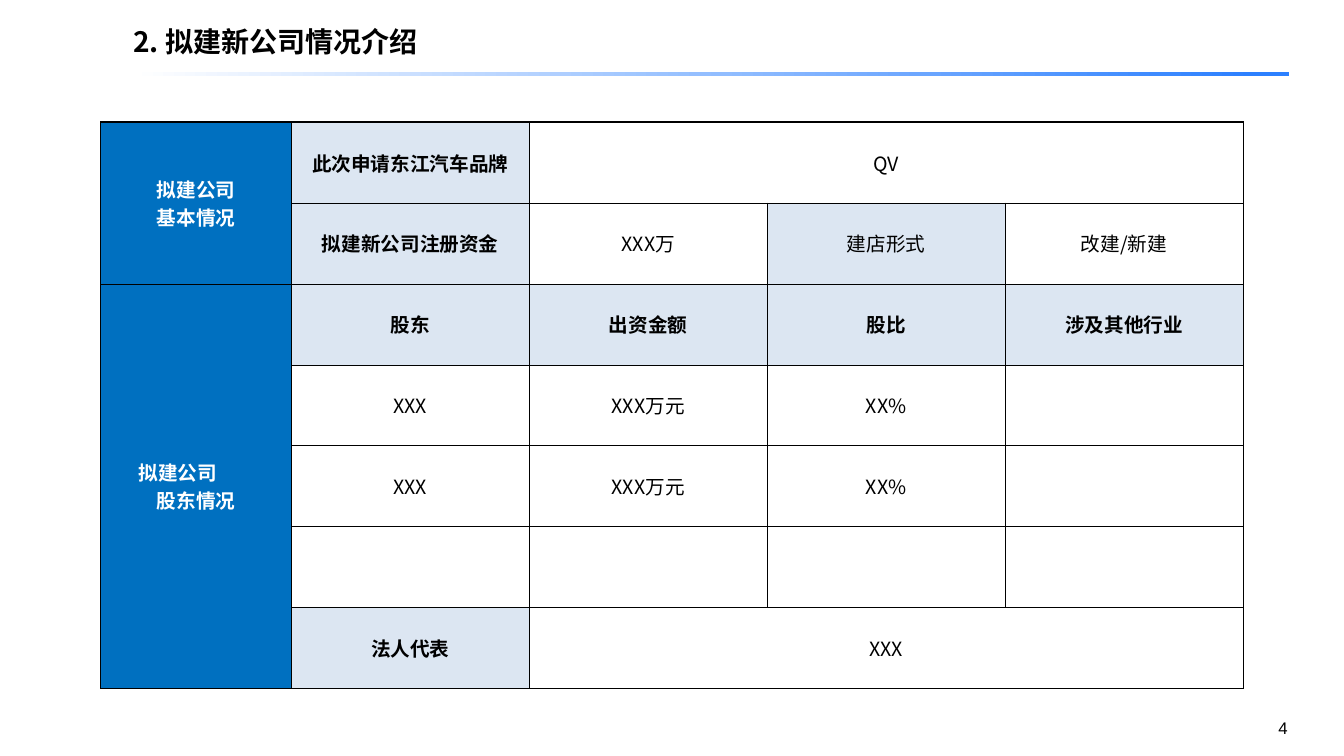
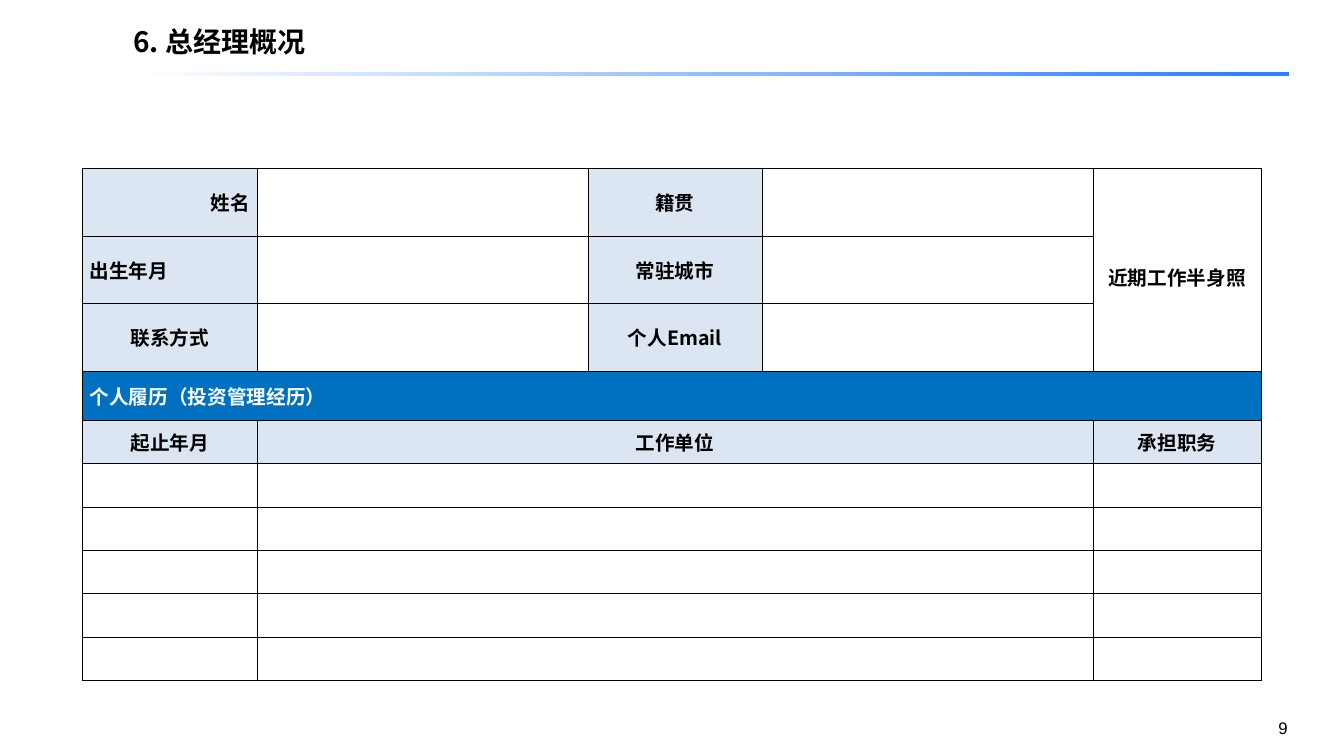
from copy import deepcopy
from dataclasses import dataclass

from lxml.etree import SubElement
from pptx import Presentation
from pptx.dml.color import RGBColor
from pptx.enum.shapes import MSO_SHAPE
from pptx.enum.text import MSO_ANCHOR as Anchor, PP_ALIGN as Align
from pptx.oxml.ns import qn
from pptx.util import Inches, Pt

WHITE = RGBColor(0xFF, 0xFF, 0xFF)
BLACK = RGBColor(0, 0, 0)
BLUE = RGBColor(0x00, 0x70, 0xC0)
PALE = RGBColor(0xDC, 0xE6, 0xF2)
RULE_STOPS = [
    (0, WHITE),
    (0.51, RGBColor(0x91, 0xBD, 0xFF)),
    (0.97, RGBColor(0x2C, 0x80, 0xFF)),
]
CJK = "Noto Sans CJK SC"
LATIN = "Arial"
OUTER, INNER = 1, 0.25


@dataclass
class Entry:
    """Content and look of one table cell."""

    text: str = ""
    fill: RGBColor = None
    bold: bool = False
    color: RGBColor = BLACK
    span: tuple = (1, 1)
    align: Align = Align.CENTER
    spacing: float = None
    stagger: float = 0


def label(text, **look):
    """Return a pale, bold label entry."""
    return Entry(text, PALE, True, **look)


def section(text, **look):
    """Return a blue section entry with white bold text."""
    return Entry(text, BLUE, True, WHITE, **look)


def style_runs(paragraph, font_name, size, color, bold=False):
    """Format every run of a paragraph."""
    for run in paragraph.runs:
        font = run.font
        font.name, font.size, font.bold = font_name, Pt(size), bold
        font.color.rgb = color
        SubElement(run._r.get_or_add_rPr(), qn("a:ea"), typeface=font_name)


def add_text(slide, box, text, font_name, size, bold=False, anchor=Anchor.TOP,
             align=Align.LEFT, spacing=None, insets=(0.1, 0.05)):
    """Place a single line of text in a box."""
    frame = slide.shapes.add_textbox(*map(Inches, box)).text_frame
    frame.word_wrap = True
    frame.vertical_anchor = anchor
    frame.margin_left = frame.margin_right = Inches(insets[0])
    frame.margin_top = frame.margin_bottom = Inches(insets[1])
    frame.text = text
    line = frame.paragraphs[0]
    line.alignment, line.line_spacing = align, spacing
    style_runs(line, font_name, size, BLACK, bold)


def add_title_rule(slide, box):
    """Draw the fading rule under the title."""
    rule = slide.shapes.add_shape(MSO_SHAPE.RECTANGLE, *map(Inches, box))
    rule.shadow.inherit = False
    rule.line.fill.background()
    rule.fill.gradient()
    rule.fill.gradient_angle = 0
    stop_list = rule._element.spPr.find(".//" + qn("a:gsLst"))
    stop_list.append(deepcopy(stop_list[0]))
    for stop, (position, color) in zip(rule.fill.gradient_stops, RULE_STOPS):
        stop.position, stop.color.rgb = position, color


def add_page(deck, title, number):
    """Add a slide with the shared title, rule and page number."""
    slide = deck.slides.add_slide(deck.slide_layouts[6])
    add_title_rule(slide, (1.3, 0.71, 11.48, 0.04))
    add_text(slide, (1.24, 0.06, 11.5, 0.75), title, CJK, 20, bold=True,
             anchor=Anchor.MIDDLE, spacing=0.9, insets=(0.08, 0.04))
    add_text(slide, (11.13, 7.07, 1.74, 0.3), number, LATIN, 12, align=Align.RIGHT)
    return slide


def set_borders(cell, weights):
    """Draw black borders with weights given as left, right, top, bottom."""
    for side, weight in zip("LRTB", weights):
        border = SubElement(cell._tc.get_or_add_tcPr(), qn(f"a:ln{side}"), w=str(Pt(weight)))
        solid = SubElement(border, qn("a:solidFill"))
        SubElement(solid, qn("a:srgbClr"), val=str(BLACK))


def fill_cell(cell, entry, margin):
    """Write and format one entry in a cell."""
    cell.vertical_anchor = Anchor.MIDDLE
    cell.margin_left = Inches(margin)
    cell.margin_right = Inches(margin + entry.stagger)
    cell.margin_top = cell.margin_bottom = 0
    if entry.fill is None:
        cell.fill.background()
    else:
        cell.fill.solid()
        cell.fill.fore_color.rgb = entry.fill
    cell.text_frame.text = entry.text
    for index, paragraph in enumerate(cell.text_frame.paragraphs):
        paragraph.alignment = entry.align
        paragraph.line_spacing = entry.spacing
        if index and entry.stagger:
            paragraph._p.get_or_add_pPr().set("marL", str(Inches(entry.stagger)))
        style_runs(paragraph, CJK, 14, entry.color, entry.bold)
        if not paragraph.runs:
            SubElement(paragraph._p, qn("a:endParaRPr"), sz="1400")


def add_form(slide, left, top, widths, heights, rows, margin):
    """Build a bordered form table; None marks a cell covered by a span."""
    table = slide.shapes.add_table(
        len(heights), len(widths), Inches(left), Inches(top),
        Inches(sum(widths)), Inches(sum(heights))).table
    table.first_row = table.horz_banding = False
    for column, width in zip(table.columns, widths):
        column.width = Inches(width)
    for row, height in zip(table.rows, heights):
        row.height = Inches(height)
    last_row, last_column = len(heights) - 1, len(widths) - 1
    for r, entries in enumerate(rows):
        for c, entry in enumerate(entries):
            cell = table.cell(r, c)
            edges = (c == 0, c == last_column, r == 0, r == last_row)
            set_borders(cell, [OUTER if edge else INNER for edge in edges])
            fill_cell(cell, entry or Entry(), margin)
            if entry and entry.span != (1, 1):
                down, across = entry.span
                cell.merge(table.cell(r + down - 1, c + across - 1))


def add_company_slide(deck):
    """Add the slide on the planned company and its shareholders."""
    slide = add_page(deck, "2. 拟建新公司情况介绍", "4")
    shareholder = [None, Entry("XXX"), Entry("XXX万元"), Entry("XX%"), Entry()]
    rows = [
        [section("拟建公司\n基本情况", span=(2, 1)), label("此次申请东江汽车品牌"),
         Entry("QV", span=(1, 3)), None, None],
        [None, label("拟建新公司注册资金"), Entry("XXX万"),
         Entry("建店形式", PALE), Entry("改建/新建")],
        [section("拟建公司\n股东情况", span=(5, 1), stagger=0.36)]
        + [label(text) for text in ("股东", "出资金额", "股比", "涉及其他行业")],
        shareholder,
        shareholder,
        [None] + [Entry()] * 4,
        [None, label("法人代表"), Entry("XXX", span=(1, 3)), None, None],
    ]
    heights = [5.62 / len(rows)] * len(rows)
    add_form(slide, 1, 1.21, [1.89] + [2.36] * 4, heights, rows, 0.02)


def add_manager_slide(deck):
    """Add the slide with the general manager's profile form."""
    slide = add_page(deck, "6. 总经理概况", "9")
    photo = Entry("近期工作半身照", bold=True, span=(3, 1), spacing=1.5)
    history = [Entry(), Entry(span=(1, 3)), None, None, Entry()]
    rows = [
        [label("姓名", align=Align.RIGHT), Entry(), label("籍贯"), Entry(), photo],
        [label("出生年月", align=Align.LEFT), Entry(), label("常驻城市"), Entry(), None],
        [label("联系方式"), Entry(), label("个人Email"), Entry(), None],
        [section("个人履历（投资管理经历）", span=(1, 5), align=Align.LEFT)] + [None] * 4,
        [label("起止年月"), label("工作单位", span=(1, 3)), None, None, label("承担职务")],
    ] + [history] * 5
    heights = [0.67] * 3 + [0.49] + [0.43] * 6
    add_form(slide, 0.82, 1.67, [1.73, 3.28, 1.73, 3.28, 1.67], heights, rows, 0.07)


def main():
    """Build and save the deck."""
    deck = Presentation()
    deck.slide_width, deck.slide_height = Inches(13.33), Inches(7.5)
    add_company_slide(deck)
    add_manager_slide(deck)
    deck.save("out.pptx")


if __name__ == "__main__":
    main()
